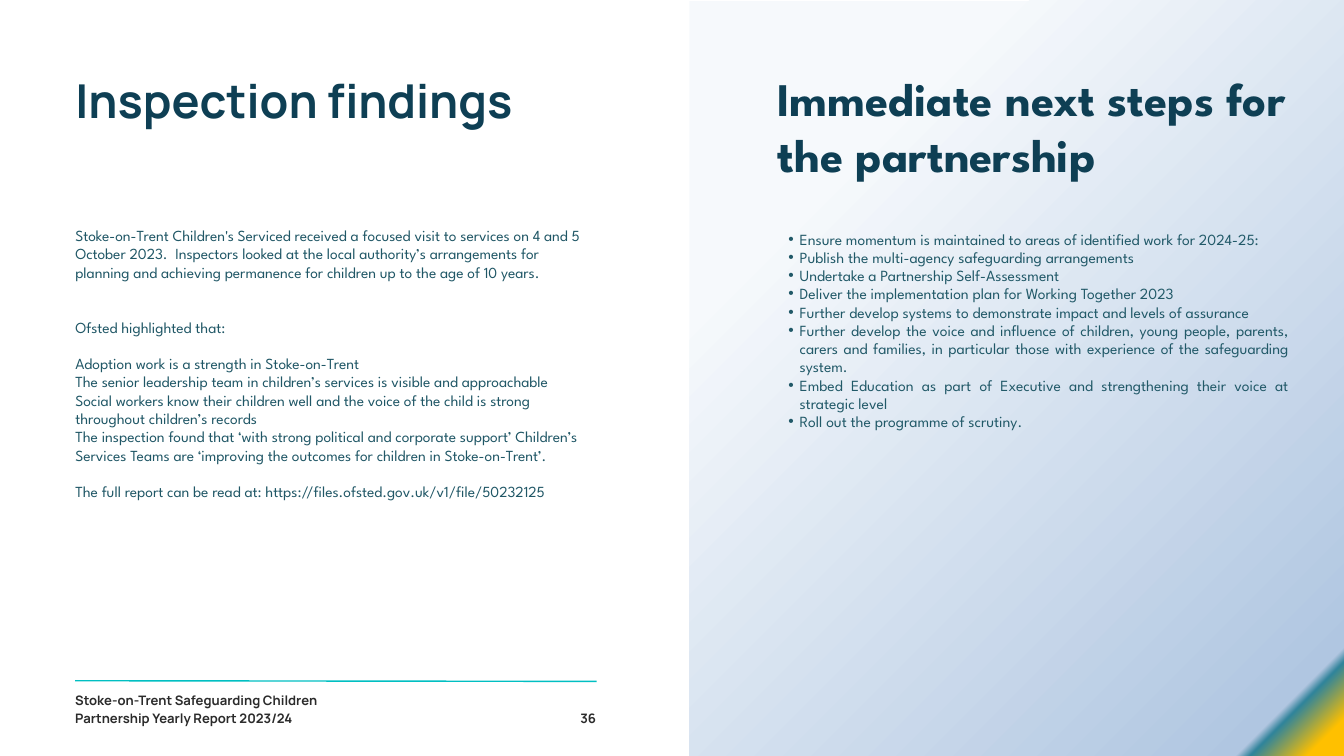
import lxml.etree
import pptx
import pptx.dml.color
import pptx.enum.shapes
import pptx.enum.text
import pptx.oxml
import pptx.oxml.ns
import pptx.util

Inches = pptx.util.Inches
Pt = pptx.util.Pt
RGBColor = pptx.dml.color.RGBColor
ALIGN = pptx.enum.text.PP_ALIGN
qn = pptx.oxml.ns.qn

NAVY = RGBColor(0x0E, 0x3F, 0x54)
TEAL = RGBColor(0x20, 0x57, 0x66)
STEPS_TEAL = RGBColor(0x21, 0x59, 0x68)
CHARCOAL = RGBColor(0x2B, 0x2B, 0x2B)
AQUA = RGBColor(0x01, 0xBF, 0xC2)
GOLD = RGBColor(0xFF, 0xC0, 0x00)
SEA = RGBColor(0x31, 0x85, 0x9C)
SKY = RGBColor(0xB0, 0xC6, 0xE1)
MIST = RGBColor(0xF6, 0xF9, 0xFC)
PANEL_STOPS = [(3, GOLD), (7, SEA), (8, SKY), (78, MIST)]

LINE = 19.6
FINDINGS = [
    ("Stoke-on-Trent Children's Serviced received a focused visit to services on 4 and 5 "
     "October 2023.  Inspectors looked at the local authority’s arrangements for planning "
     "and achieving permanence for children up to the age of 10 years.", 0),
    ("Ofsted highlighted that:", 2),
    ("Adoption work is a strength in Stoke-on-Trent", 1),
    ("The senior leadership team in children’s services is visible and approachable", 0),
    ("Social workers know their children well and the voice of the child is strong "
     "throughout children’s records", 0),
    ("The inspection found that ‘with strong political and corporate support’ Children’s "
     "Services Teams are ‘improving the outcomes for children in Stoke-on-Trent’.", 0),
    ("The full report can be read at: https://files.ofsted.gov.uk/v1/file/50232125", 1),
]
NEXT_STEPS = [
    "Ensure momentum is maintained to areas of identified work for 2024-25:",
    "Publish the multi-agency safeguarding arrangements",
    "Undertake a Partnership Self-Assessment",
    "Deliver the implementation plan for Working Together 2023",
    "Further develop systems to demonstrate impact and levels of assurance",
    "Further develop the voice and influence of children, young people, parents, carers and "
    "families, in particular those with experience of the safeguarding system.",
    "Embed Education as part of Executive and strengthening their voice at strategic level",
    "Roll out the programme of scrutiny.",
]


def write(holder, lines, *, size, font, color, bold=False, spacing=LINE,
          align=ALIGN.LEFT, bullet=None, inset=(0, 0)):
    frame = holder.text_frame
    frame.word_wrap = True
    frame.auto_size = pptx.enum.text.MSO_AUTO_SIZE.NONE
    frame.vertical_anchor = pptx.enum.text.MSO_ANCHOR.TOP
    frame.margin_left = frame.margin_right = Inches(inset[0])
    frame.margin_top = frame.margin_bottom = Inches(inset[1])
    for index, (text, lines_before) in enumerate(lines):
        paragraph = frame.paragraphs[0] if index == 0 else frame.add_paragraph()
        paragraph.text = text
        paragraph.alignment = align
        paragraph.line_spacing = Pt(spacing)
        paragraph.space_before = Pt(lines_before * spacing)
        properties = paragraph._p.get_or_add_pPr()
        properties.set("marL", str(Inches(0.33) if bullet else 0))
        properties.set("indent", str(Inches(-0.17) if bullet else 0))
        if bullet:
            lxml.etree.SubElement(properties, qn("a:buChar"), char=bullet)
        else:
            lxml.etree.SubElement(properties, qn("a:buNone"))
        for run in paragraph.runs:
            run.font.size = Pt(size)
            run.font.name = font
            run.font.bold = bold
            run.font.color.rgb = color


def place(holder, left, top, width, height):
    holder.left, holder.top = Inches(left), Inches(top)
    holder.width, holder.height = Inches(width), Inches(height)
    return holder


def add_text_box(slide, left, top, width, height):
    return slide.shapes.add_textbox(Inches(left), Inches(top), Inches(width), Inches(height))


def add_panel(slide, left, top, width, height):
    panel = slide.shapes.add_shape(
        pptx.enum.shapes.MSO_SHAPE.RECTANGLE,
        Inches(left), Inches(top), Inches(width), Inches(height))
    panel.shadow.inherit = False
    panel.line.fill.background()
    panel.fill.gradient()
    gradient = panel.element.spPr.find(qn("a:gradFill"))
    for child in list(gradient):
        gradient.remove(child)
    stops = lxml.etree.SubElement(gradient, qn("a:gsLst"))
    for percent, color in PANEL_STOPS:
        stop = lxml.etree.SubElement(stops, qn("a:gs"), pos=str(percent * 1000))
        lxml.etree.SubElement(stop, qn("a:srgbClr"), val=str(color))
    circle = lxml.etree.SubElement(gradient, qn("a:path"), path="circle")
    lxml.etree.SubElement(circle, qn("a:fillToRect"), l="100000", t="100000")
    slide.shapes.title.element.addprevious(panel.element)


def add_findings(slide, left, top, width, height):
    heading = place(slide.shapes.title, left, top, width, 0.84)
    write(heading, [("Inspection findings", 0)], size=50, font="Manrope",
          color=NAVY, bold=True, spacing=60)
    findings = place(slide.placeholders[1], left, top + 2.3, 7.65, height - 2.3)
    write(findings, FINDINGS, size=16.5, font="League Spartan", color=TEAL)


def add_next_steps(slide, left, top, width, height):
    heading = add_text_box(slide, left, top, width, 1.78)
    write(heading, [("Immediate next steps for the partnership", 0)], size=50,
          font="League Spartan", color=NAVY, bold=True, spacing=60, inset=(0.1, 0.05))
    steps = place(slide.placeholders[2], left, top + 2.38, 7.8, height - 2.38)
    write(steps, [(step, 0) for step in NEXT_STEPS], size=16.6, font="League Spartan",
          color=STEPS_TEAL, align=ALIGN.JUSTIFY, bullet="•", inset=(0.1, 0.05))


def add_footer(slide, left, top, width, height):
    rule = slide.shapes.add_connector(
        pptx.enum.shapes.MSO_CONNECTOR.STRAIGHT,
        Inches(left), Inches(top), Inches(left + width), Inches(top + 0.01))
    rule.line.color.rgb = AQUA
    rule.line.width = Pt(1.5)
    lxml.etree.SubElement(rule.element.spPr, qn("a:effectLst"))
    style = dict(size=14, font="Manrope", color=CHARCOAL, bold=True)
    report = add_text_box(slide, left, top + 0.13, 4.44, height - 0.13)
    write(report, [("Stoke-on-Trent Safeguarding Children Partnership Yearly Report 2023/24", 0)],
          **style)
    page_number = add_text_box(slide, left + width - 1.15, top + 0.4, 1.14, 0.27)
    write(page_number, [("36", 0)], align=ALIGN.RIGHT, **style)


def main():
    presentation = pptx.Presentation()
    presentation.slide_width = Inches(20)
    presentation.slide_height = Inches(11.25)
    slide = presentation.slides.add_slide(presentation.slide_layouts.get_by_name("Two Content"))
    add_panel(slide, 10.26, 0.01, 9.82, 11.24)
    add_findings(slide, 1.12, 1.07, 8.57, 7.35)
    add_next_steps(slide, 11.47, 0.99, 7.94, 6.13)
    add_footer(slide, 1.12, 10.13, 7.76, 0.96)
    presentation.save("out.pptx")


if __name__ == "__main__":
    main()
